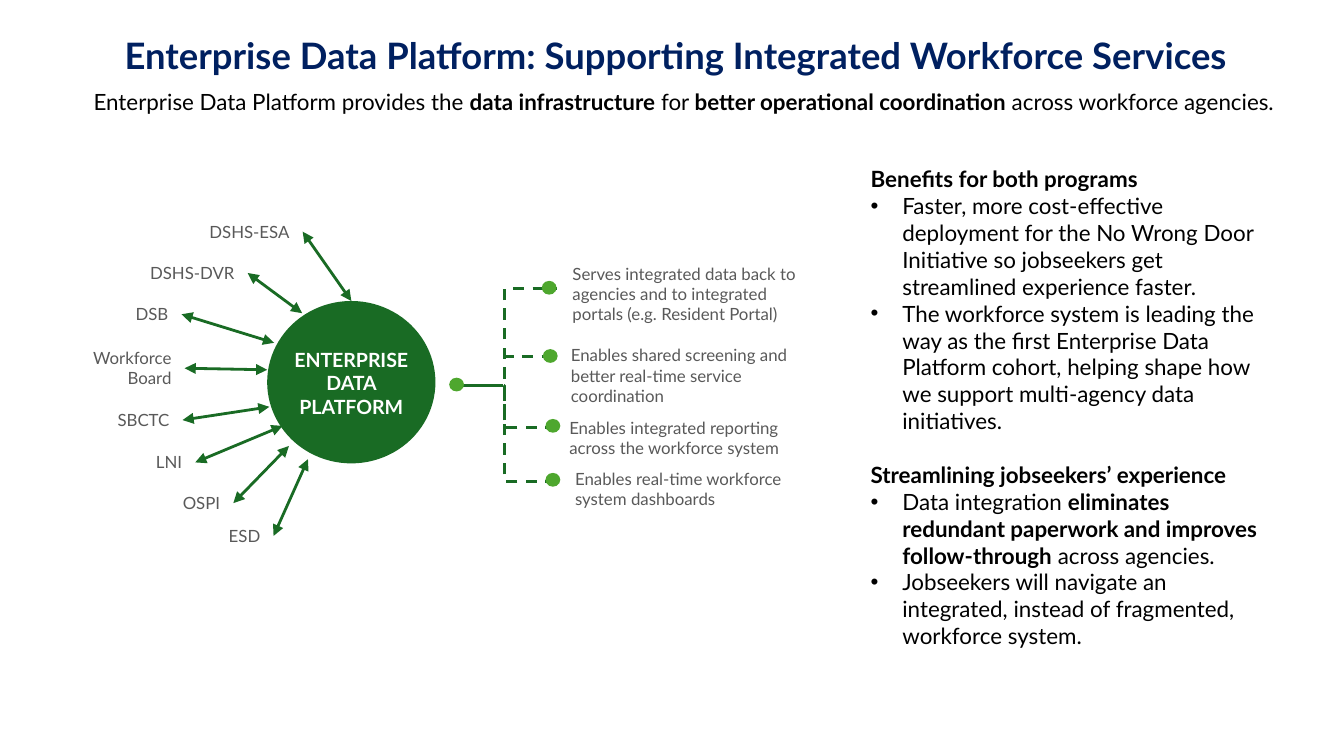
import lxml.etree
import pptx
import pptx.dml.color
import pptx.enum.dml
import pptx.enum.shapes
import pptx.enum.text
import pptx.oxml.ns
import pptx.util

Cm = pptx.util.Cm
Pt = pptx.util.Pt
ALIGN = pptx.enum.text.PP_ALIGN
KIND = pptx.enum.shapes.MSO_CONNECTOR
NAVY = pptx.dml.color.RGBColor(0x00, 0x20, 0x60)
BLACK = pptx.dml.color.RGBColor(0x00, 0x00, 0x00)
WHITE = pptx.dml.color.RGBColor(0xFF, 0xFF, 0xFF)
GRAY = pptx.dml.color.RGBColor(0x59, 0x59, 0x59)
GREEN = pptx.dml.color.RGBColor(0x19, 0x6B, 0x24)
LIME = pptx.dml.color.RGBColor(0x4E, 0xA7, 0x2E)

AGENCIES = [
    ("DSHS-ESA", 3.12, 4.06, 0.64, (6.64, 5.69)),
    ("DSHS-DVR", 2.08, 4.84, 0.64, (5.71, 5.92)),
    ("DSB", 0.83, 5.62, 0.64, (5.18, 6.48)),
    ("Workforce Board", 0.89, 6.45, 1.02, (5.05, 6.99)),
    ("SBCTC", 0.85, 7.62, 0.64, (5.09, 7.69)),
    ("LNI", 1.09, 8.42, 0.64, (5.34, 8.05)),
    ("OSPI", 1.81, 9.19, 0.64, (5.46, 8.43)),
    ("ESD", 2.57, 9.81, 0.64, (5.82, 8.68)),
]
HUB = (8.56, 7.29)
TIP = 10.52
USES = [
    ("Serves integrated data back to agencies and to integrated portals (e.g. Resident Portal)",
     10.57, 4.86, 1.43, 5.46, (10.24, 5.31)),
    ("Enables shared screening and better real-time service coordination",
     10.54, 6.4, 1.43, 6.74, (10.26, 6.6)),
    ("Enables integrated reporting across the workforce system",
     10.51, 7.77, 1.02, 8.08, (10.31, 7.92)),
    ("Enables real-time workforce system dashboards",
     10.62, 8.74, 1.02, 9.1, (10.31, 8.94)),
]
GAINS = [
    ("Benefits for both programs", [
        "Faster, more cost-effective deployment for the No Wrong Door Initiative "
        "so jobseekers get streamlined experience faster.",
        "The workforce system is leading the way as the first Enterprise Data Platform "
        "cohort, helping shape how we support multi-agency data initiatives.",
    ]),
    ("Streamlining jobseekers’ experience", [
        "Data integration **eliminates redundant paperwork and improves follow-through** "
        "across agencies.",
        "Jobseekers will navigate an integrated, instead of fragmented, workforce system.",
    ]),
]


def add_tag(node, name, **attrs):
    return lxml.etree.SubElement(node, pptx.oxml.ns.qn(name), **attrs)


def write(para, text, size=9, color=GRAY, align=ALIGN.LEFT):
    para.alignment = align
    for i, part in enumerate(text.split("**")):
        if part:
            run = para.add_run()
            run.text = part
            run.font.name = "Lato"
            run.font.size = Pt(size)
            run.font.bold = i % 2 == 1
            run.font.color.rgb = color


def add_text(shapes, text, x, y, w, h, **style):
    box = shapes.add_textbox(Cm(x), Cm(y), Cm(w), Cm(h))
    box.text_frame.word_wrap = True
    write(box.text_frame.paragraphs[0], text, **style)
    return box


def add_oval(shapes, x, y, w, h, color):
    oval = shapes.add_shape(pptx.enum.shapes.MSO_SHAPE.OVAL, Cm(x), Cm(y), Cm(w), Cm(h))
    oval.shadow.inherit = False
    oval.fill.solid()
    oval.fill.fore_color.rgb = color
    oval.line.fill.background()
    return oval


def add_line(shapes, kind, start, end):
    line = shapes.add_connector(kind, *map(Cm, start + end))
    line.line.color.rgb = GREEN
    line.line.width = Pt(1.5)
    add_tag(line._element.spPr, "a:effectLst")
    return line


def add_arrow(shapes, label, start, end):
    line = add_line(shapes, KIND.STRAIGHT, start, end)
    line.begin_connect(label, 3)
    edge = line.line._get_or_add_ln()
    add_tag(edge, "a:headEnd", type="triangle")
    add_tag(edge, "a:tailEnd", type="triangle")
    return line


def place(holder, x, y, w, h):
    holder.left, holder.top, holder.width, holder.height = map(Cm, (x, y, w, h))
    frame = holder.text_frame
    frame.word_wrap = True
    frame.auto_size = pptx.enum.text.MSO_AUTO_SIZE.NONE
    return frame


def add_title(slide):
    frame = place(slide.shapes.title, 0.79, 0.53, 23.98, 1.12)
    frame.vertical_anchor = pptx.enum.text.MSO_ANCHOR.MIDDLE
    para = frame.paragraphs[0]
    para.line_spacing = 0.9
    write(para, "**Enterprise Data Platform: Supporting Integrated Workforce Services**",
          size=19.5, color=NAVY, align=ALIGN.CENTER)


def add_item(frame, text, dot, gap=0):
    first = not frame.paragraphs[0].runs
    para = frame.paragraphs[0] if first else frame.add_paragraph()
    para.space_before = Pt(gap)
    props = para._p.get_or_add_pPr()
    props.set("marL", str(Cm(0.6) if dot else 0))
    props.set("indent", str(-Cm(0.6) if dot else 0))
    if dot:
        add_tag(props, "a:buFont", typeface="Arial")
        add_tag(props, "a:buChar", char="•")
    else:
        add_tag(props, "a:buNone")
    write(para, text, size=12, color=BLACK)


def add_gains(slide):
    frame = place(slide.placeholders[1], 16.2, 3, 7.88, 10.01)
    for i, (head, items) in enumerate(GAINS):
        add_item(frame, f"**{head}**", False, gap=14.4 if i else 0)
        for item in items:
            add_item(frame, item, True)


def add_core(shapes):
    group = shapes.add_group_shape().shapes
    core = add_oval(group, 5.05, 5.69, 3.18, 3.07, GREEN)
    add_text(group, "**ENTERPRISE DATA PLATFORM**", 5.28, 6.45, 2.72, 1.6,
             size=10.5, color=WHITE, align=ALIGN.CENTER)
    return core


def add_sources(shapes, core):
    wide = 2.6
    for i, (name, x, y, h, end) in enumerate(AGENCIES):
        label = add_text(shapes, name, x, y, wide, h, align=ALIGN.RIGHT)
        arrow = add_arrow(shapes, label, (x + wide, y + h / 2), end)
        if i == 0:
            arrow.end_connect(core, 0)


def add_uses(shapes):
    for text, x, y, h, level, dot in USES:
        ends = [HUB, (TIP, level)]
        if level > HUB[1]:
            ends.reverse()
        branch = add_line(shapes, KIND.ELBOW, *ends)
        branch.line.dash_style = pptx.enum.dml.MSO_LINE.DASH
        add_text(shapes, text, x, y, 5.1, h)
    for x, y in [(8.49, 7.14)] + [use[-1] for use in USES]:
        add_oval(shapes, x, y, 0.28, 0.26, LIME)


def main():
    deck = pptx.Presentation()
    deck.slide_width, deck.slide_height = Cm(25.4), Cm(14.29)
    slide = deck.slides.add_slide(deck.slide_layouts[1])
    shapes = slide.shapes
    add_title(slide)
    add_text(shapes, "Enterprise Data Platform provides the **data infrastructure** for "
             "**better operational coordination** across workforce agencies.",
             0.86, 1.55, 24.13, 0.76, size=12, color=BLACK, align=ALIGN.CENTER)
    add_gains(slide)
    core = add_core(shapes)
    add_sources(shapes, core)
    add_uses(shapes)
    deck.save("out.pptx")


if __name__ == "__main__":
    main()
